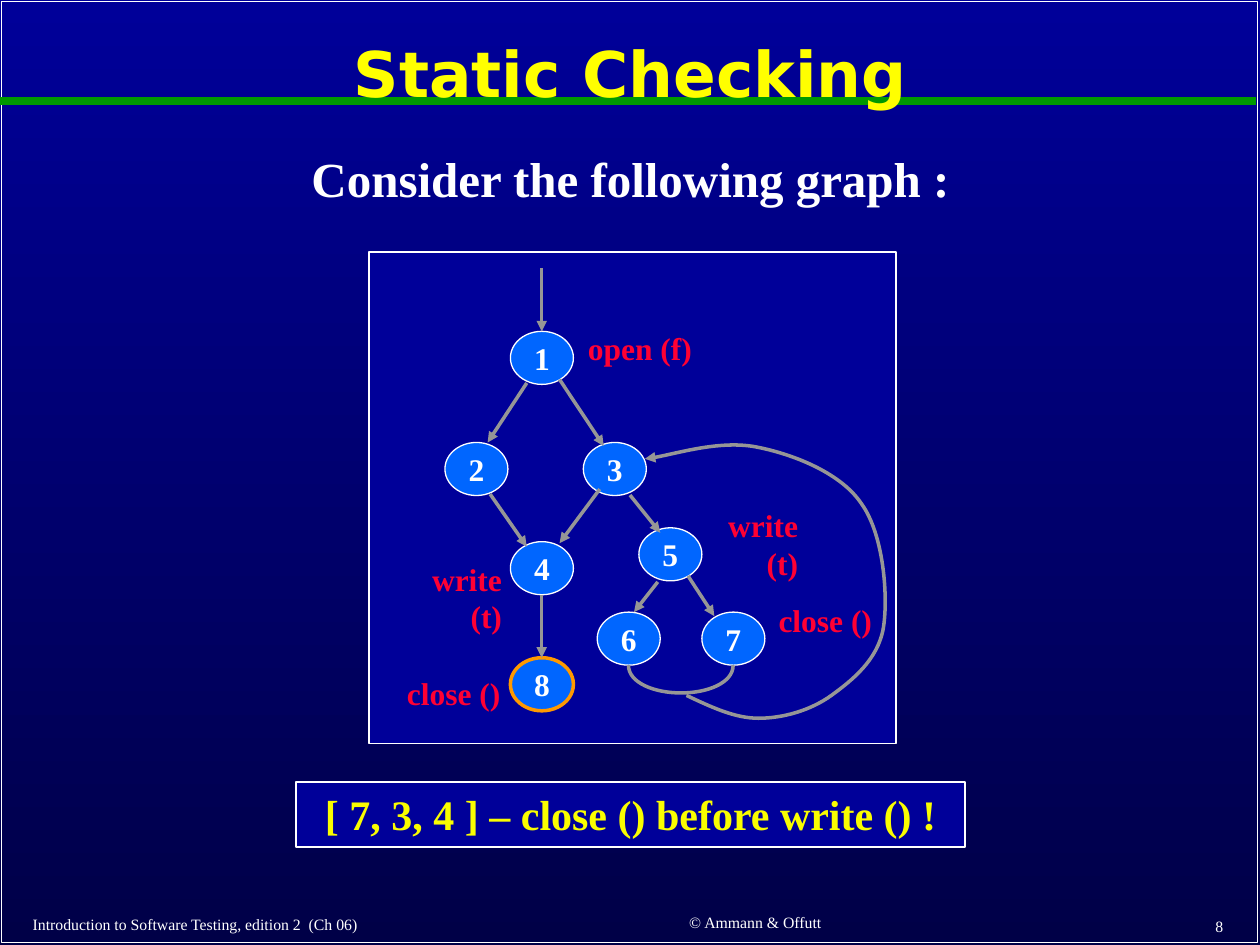
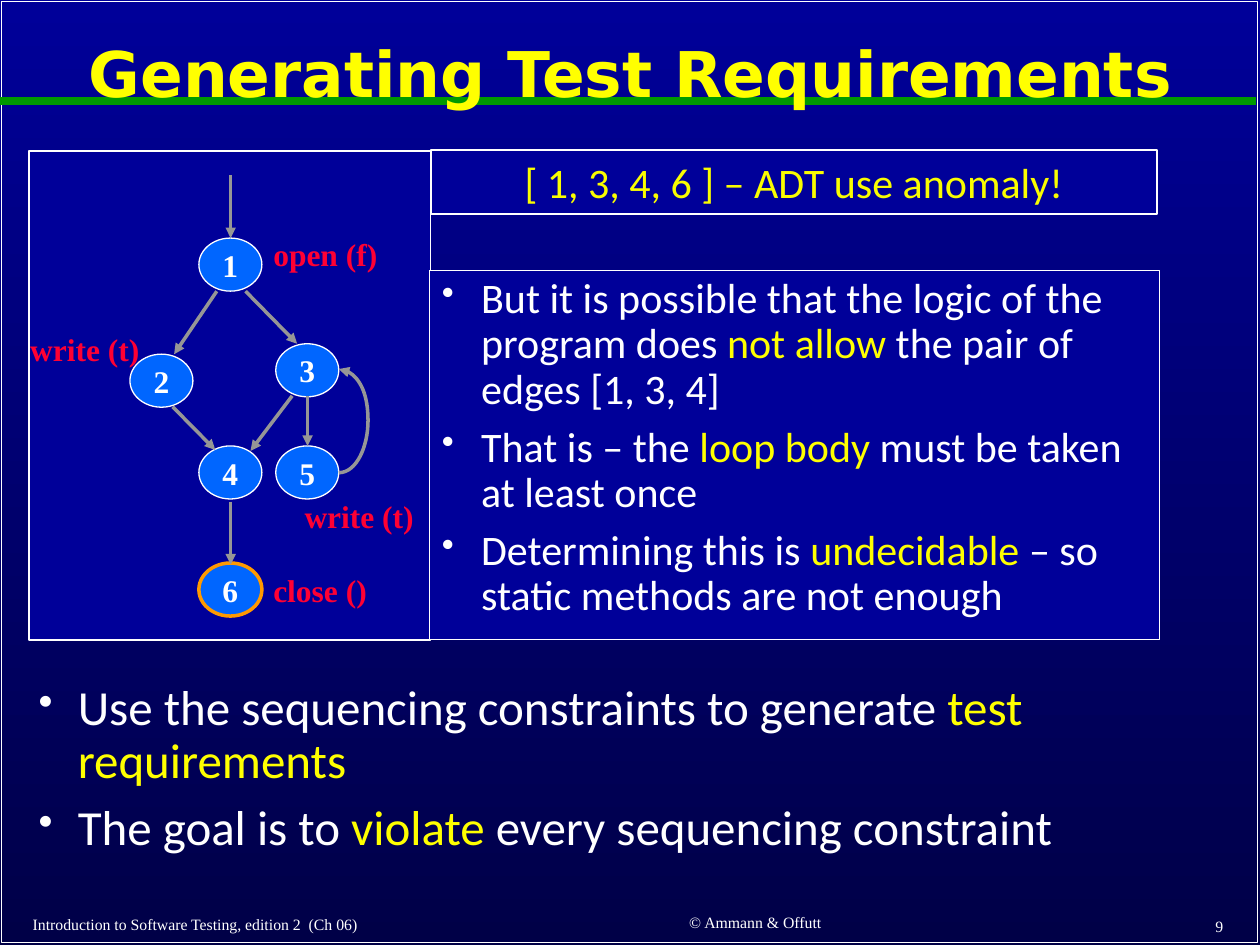
from lxml import etree
from pptx import Presentation
from pptx import util as u
from pptx.dml.color import RGBColor
from pptx.enum import shapes, text as t
from pptx.oxml.ns import qn

NAVY = RGBColor(0x00, 0x00, 0x99)
DEEP_NAVY = RGBColor(0x00, 0x00, 0x47)
GREEN = RGBColor(0x00, 0x99, 0x00)
WHITE = RGBColor(0xFF, 0xFF, 0xFF)
YELLOW = RGBColor(0xFF, 0xFF, 0x00)
LEMON = RGBColor(0xFA, 0xFD, 0x00)
RED = RGBColor(0xFF, 0x00, 0x33)
BLUE = RGBColor(0x00, 0x66, 0xFF)
ORANGE = RGBColor(0xFF, 0x99, 0x00)
GREY = RGBColor(0x96, 0x96, 0x96)
SERIF, SANS, TITLE_FONT = "Times New Roman", "Calibri", "DejaVu Sans"
LEFT, CENTER, RIGHT = t.PP_ALIGN.LEFT, t.PP_ALIGN.CENTER, t.PP_ALIGN.RIGHT
TOP, MIDDLE = t.MSO_ANCHOR.TOP, t.MSO_ANCHOR.MIDDLE
RECT, OVAL = shapes.MSO_SHAPE.RECTANGLE, shapes.MSO_SHAPE.OVAL
STRAIGHT = shapes.MSO_CONNECTOR.STRAIGHT
NODE_SIZE = (1.27, 1.07)
LABEL_HEIGHT = 1.02


def write(page, text, place, kind=None, fill=None, outline=WHITE, weight=1,
          size=18, font=SERIF, colour=WHITE, bold=False, align=LEFT,
          anchor=TOP, spacing=1, bullets=False, insets=(0.25, 0.13)):
    """Add a box of text; new lines part paragraphs, *stars* mark yellow words."""
    place = [u.Cm(length) for length in place]
    if kind is None:
        box = page.shapes.add_textbox(*place)
    else:
        box = page.shapes.add_shape(kind, *place)
        box.shadow.inherit = False
        box.line.color.rgb = outline
        box.line.width = u.Pt(weight)
        if fill is None:
            box.fill.background()
        else:
            box.fill.solid()
            box.fill.fore_color.rgb = fill
    if not text:
        return
    frame = box.text_frame
    frame.word_wrap = True
    frame.vertical_anchor = anchor
    frame.margin_left = frame.margin_right = u.Cm(insets[0])
    frame.margin_top = frame.margin_bottom = u.Cm(insets[1])
    for row, line in enumerate(text.split("\n")):
        para = frame.add_paragraph() if row else frame.paragraphs[0]
        para.alignment = align
        para.line_spacing = spacing
        if row:
            para.space_before = u.Pt(0.3 * size)
        if bullets:
            props = para._p.get_or_add_pPr()
            props.set("marL", str(u.Cm(0.79)))
            props.set("indent", str(u.Cm(-0.79)))
            etree.SubElement(props, qn("a:buSzPct")).set("val", "85000")
            etree.SubElement(props, qn("a:buChar")).set("char", "•")
        for part, words in enumerate(line.split("*")):
            if words:
                span = para.add_run()
                span.text = words
                span.font.name = font
                span.font.size = u.Pt(size)
                span.font.bold = bold
                span.font.color.rgb = YELLOW if part % 2 else colour


def stroke(shape, colour=GREY, weight=2, arrow=True):
    """Style a line or curve, without a shadow."""
    shape.line.color.rgb = colour
    shape.line.width = u.Pt(weight)
    props = shape._element.spPr
    if arrow:
        etree.SubElement(props.find(qn("a:ln")), qn("a:tailEnd")).set("type", "triangle")
    etree.SubElement(props, qn("a:effectLst"))


# Nodes are name: (left, top); labels are (text, left, top, width);
# a curve is (arrow, start, then three points for each Bézier piece).
static_graph = {
    "title": "Static Checking",
    "frame": (7.44, 5.08, 10.62, 9.91),
    "nodes": {"1": (10.29, 6.68), "2": (8.97, 8.92), "3": (11.76, 8.92),
              "4": (10.29, 10.92), "5": (12.88, 10.64), "6": (12.04, 12.34),
              "7": (14.15, 12.34), "8": (10.29, 13.26)},
    "final": "8",
    "edges": [(10.92, 5.41, 10.92, 6.68), (10.62, 7.72, 9.83, 8.92),
              (11.28, 7.65, 12.17, 8.99), (9.88, 9.96, 10.62, 11.02),
              (12.09, 9.86, 11.28, 10.95), (12.7, 9.98, 13.31, 10.74),
              (10.92, 11.99, 10.92, 13.26), (13.26, 11.73, 12.78, 12.34),
              (13.87, 11.61, 14.4, 12.42)],
    "curves": [
        (False, (12.67, 13.41),
         (12.67, 13.77), (13.2, 13.97), (13.73, 13.97),
         (14.26, 13.97), (14.78, 13.77), (14.78, 13.41)),
        (True, (13.84, 14.02),
         (14.33, 14.25), (14.81, 14.48), (15.29, 14.48),
         (15.77, 14.48), (16.33, 14.33), (16.76, 14.02),
         (17.17, 13.72), (17.7, 13.31), (17.81, 12.65),
         (17.91, 12.01), (17.81, 10.77), (17.37, 10.16),
         (16.97, 9.55), (16.03, 9.17), (15.29, 9.02),
         (14.55, 8.86), (13.39, 9.22), (13, 9.25))],
    "label_align": RIGHT,
    "labels": [("open (f)", 11.23, 6.5, 2.97), ("write (t)", 7.8, 11.15, 2.57),
               ("write (t)", 13.77, 10.08, 2.57), ("close ()", 7.37, 13.46, 2.97),
               ("close ()", 14.86, 11.99, 2.97)],
}
requirements_graph = {
    "title": "Generating Test Requirements",
    "frame": (0.58, 3.05, 8.1, 9.86),
    "nodes": {"1": (4.01, 4.8), "2": (2.62, 7.14), "3": (5.56, 6.93),
              "4": (4.01, 8.99), "5": (5.56, 8.99), "6": (4.01, 11.35)},
    "final": "6",
    "edges": [(4.65, 3.53, 4.65, 4.8), (4.37, 5.87, 3.51, 7.14),
              (4.95, 5.87, 5.99, 6.93), (3.48, 8.2, 4.34, 9.07),
              (5.89, 7.98, 5.05, 9.09), (6.2, 7.98, 6.2, 8.99),
              (4.65, 10.11, 4.65, 11.38)],
    "curves": [(True, (6.83, 9.53),
                (7.19, 9.53), (7.42, 9), (7.42, 8.48),
                (7.42, 7.96), (7.19, 7.44), (6.83, 7.44))],
    "label_align": LEFT,
    "labels": [("open (f)", 5.26, 4.6, 2.97), ("write (t)", 0.36, 6.53, 2.97),
               ("write (t)", 5.89, 9.88, 2.97), ("close ()", 5.26, 11.38, 2.97)],
}

deck = Presentation()
deck.slide_width = u.Cm(25.4)
deck.slide_height = u.Cm(19.05)
pages = []

for number, graph in enumerate([static_graph, requirements_graph], start=8):
    page = deck.slides.add_slide(deck.slide_layouts[6])
    pages.append(page)

    # Background, border, title and footers
    backdrop = page.background.fill
    backdrop.gradient()
    backdrop.gradient_angle = 270
    for stop, colour in zip(backdrop.gradient_stops, (NAVY, DEEP_NAVY)):
        stop.color.rgb = colour
    write(page, "", (0.03, 0.03, 25.32, 18.97), kind=RECT)
    rule = page.shapes.add_connector(STRAIGHT, 0, u.Cm(2.03), u.Cm(25.32), u.Cm(2.03))
    stroke(rule, GREEN, 4.5, arrow=False)
    write(page, graph["title"], (0.38, 0.28, 24.66, 2.54), size=36, font=TITLE_FONT,
          colour=YELLOW, bold=True, align=CENTER, anchor=MIDDLE, spacing=0.9)
    for words, place, align in [
            ("Introduction to Software Testing, edition 2  (Ch 06)",
             (0.41, 18.34, 10.39, 0.58), LEFT),
            ("© Ammann & Offutt", (11.2, 18.31, 8.05, 0.58), CENTER),
            (str(number), (19.63, 18.36, 5.28, 0.61), RIGHT)]:
        write(page, words, place, size=9, align=align, anchor=MIDDLE)

    # Graph
    write(page, "", graph["frame"], kind=RECT, fill=NAVY)
    for name, corner in graph["nodes"].items():
        final = name == graph["final"]
        write(page, name, corner + NODE_SIZE, kind=OVAL, fill=BLUE,
              outline=ORANGE if final else WHITE, weight=2 if final else 0.75,
              bold=True, align=CENTER, anchor=MIDDLE, insets=(0, 0))
    for ends in graph["edges"]:
        stroke(page.shapes.add_connector(STRAIGHT, *[u.Cm(end) for end in ends]))
    for arrow, *points in graph["curves"]:
        start, *others = [(u.Cm(x), u.Cm(y)) for x, y in points]
        builder = page.shapes.build_freeform(*start, scale=1.0)
        builder.add_line_segments(others, close=False)
        curve = builder.convert_to_shape()
        curve.fill.background()
        outline = curve._element.spPr.find(".//" + qn("a:path"))
        steps = outline.findall(qn("a:lnTo"))
        for first in range(0, len(steps), 3):
            bezier = etree.SubElement(outline, qn("a:cubicBezTo"))
            for step in steps[first:first + 3]:
                bezier.append(step[0])
                outline.remove(step)
        stroke(curve, arrow=arrow)
    for words, left, top, width in graph["labels"]:
        write(page, words, (left, top, width, LABEL_HEIGHT), colour=RED, bold=True,
              align=graph["label_align"])

static_page, requirements_page = pages

write(static_page, "Consider the following graph :", (0.99, 3, 23.44, 1.32),
      size=28, bold=True, align=CENTER, spacing=0.9)
write(static_page, "[ 7, 3, 4 ] – close () before write () !", (5.97, 15.77, 13.49, 1.3),
      kind=RECT, fill=NAVY, size=24, colour=LEMON, bold=True, align=CENTER)

write(requirements_page, "[ 1, 3, 4, 6 ] – ADT use anomaly!", (8.69, 3.02, 14.63, 1.3),
      kind=RECT, fill=NAVY, size=24, font=SANS, colour=LEMON, align=CENTER)
write(requirements_page,
      "But it is possible that the logic of the program does *not allow *"
      "the pair of edges [1, 3, 4]\n"
      "That is – the *loop body* must be taken at least once\n"
      "Determining this is *undecidable* – so static methods are not enough",
      (8.66, 5.46, 14.71, 7.44), kind=RECT, fill=NAVY, weight=0.75,
      size=24, font=SANS, spacing=0.9, bullets=True)
write(requirements_page,
      "Use the sequencing constraints to generate *test requirements*\n"
      "The goal is to *violate* every sequencing constraint",
      (0.53, 13.64, 24.18, 3.91), size=28, font=SANS, spacing=0.9, bullets=True)

deck.save("out.pptx")
